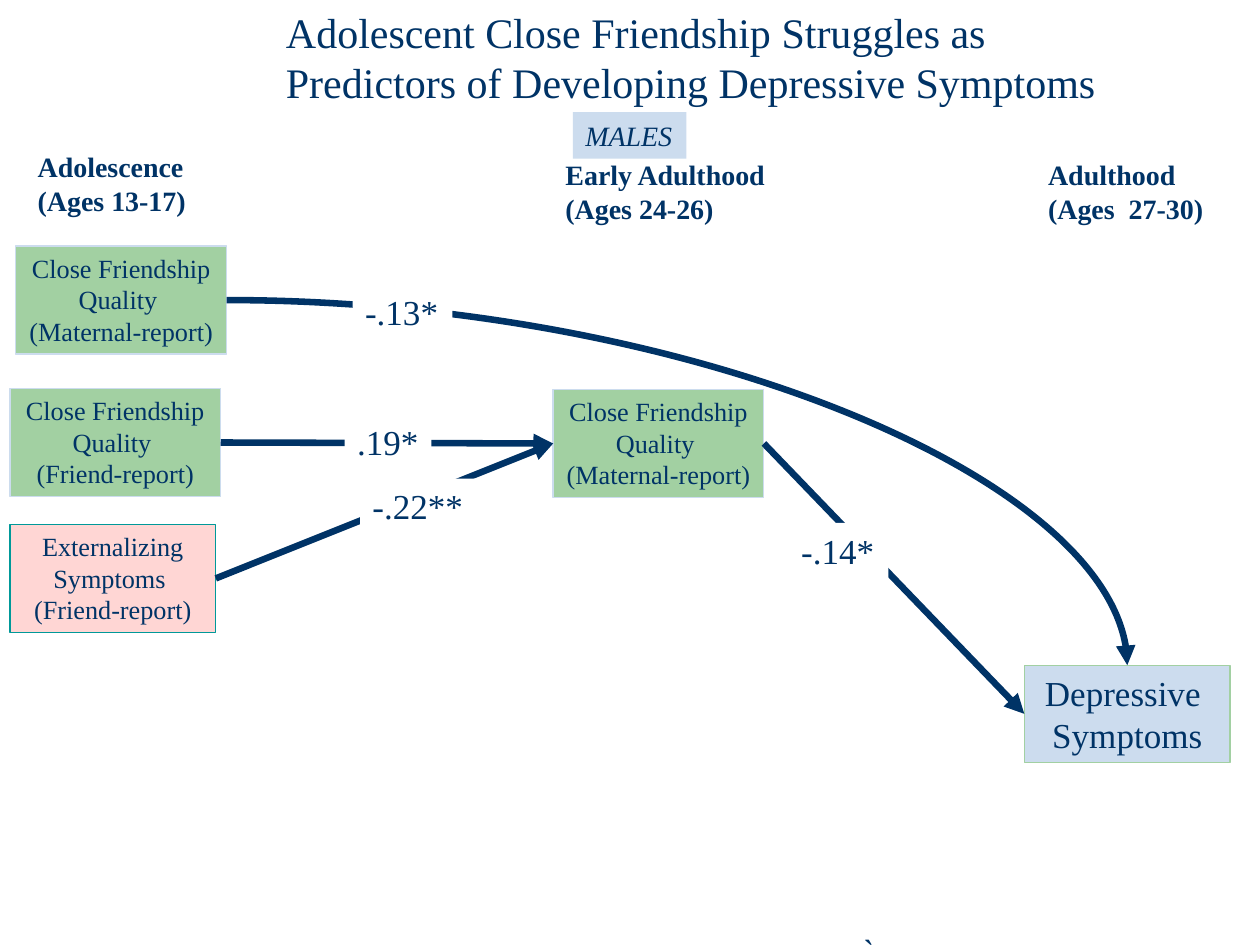
from pptx import Presentation
from pptx.dml.color import RGBColor
from pptx.enum import shapes, text
from pptx.oxml import parse_xml
from pptx.oxml.ns import nsdecls, qn
from pptx.util import Cm, Pt

NAVY = RGBColor(0x00, 0x33, 0x66)
BLUE = RGBColor(0xCC, 0xDC, 0xEE)
GREEN = RGBColor(0xA2, 0xD0, 0xA2)
PINK = RGBColor(0xFF, 0xD6, 0xD4)
TEAL = RGBColor(0x00, 0x99, 0x99)
WHITE = RGBColor(0xFF, 0xFF, 0xFF)
LEFT, MID = text.PP_ALIGN.LEFT, text.PP_ALIGN.CENTER

prs = Presentation()
prs.slide_width, prs.slide_height = Cm(25.4), Cm(19.05)
slide = prs.slides.add_slide(prs.slide_layouts[5])


def write(shape, lines, size, align=LEFT, bold=False, italic=False):
    frame = shape.text_frame
    frame.word_wrap = False
    frame.auto_size = text.MSO_AUTO_SIZE.NONE
    frame.vertical_anchor = text.MSO_ANCHOR.TOP
    for i, line in enumerate(lines):
        para = frame.add_paragraph() if i else frame.paragraphs[0]
        para.alignment = align
        run = para.add_run()
        run.text = line
        font = run.font
        font.name, font.size = "Times New Roman", Pt(size)
        font.bold, font.italic = bold, italic
        font.color.rgb = NAVY


def draw_box(x, y, w, h, fill, line=None):
    box = slide.shapes.add_shape(
        shapes.MSO_SHAPE.RECTANGLE, Cm(x), Cm(y), Cm(w), Cm(h))
    box.shadow.inherit = False
    box.fill.solid()
    box.fill.fore_color.rgb = fill
    if line is None:
        box.line.fill.background()
    else:
        box.line.color.rgb = line
        box.line.width = Pt(0.75)
    return box


# Title, group and age headings
title = slide.shapes.title
title.left, title.top, title.width, title.height = Cm(5.51), Cm(0), Cm(17), Cm(2.31)
write(title, ["Adolescent Close Friendship Struggles as",
              "Predictors of Developing Depressive Symptoms"], 24)

group = draw_box(11.55, 2.26, 2.29, 0.94, BLUE)
write(group, ["MALES"], 16, italic=True)

heads = [
    (0.51, 2.9, 3.53, "Adolescence", "(Ages 13-17)"),
    (11.15, 3.05, 4.57, "Early Adulthood", "(Ages 24-26)"),
    (20.88, 3.05, 3.68, "Adulthood", "(Ages  27-30)"),
]
for x, y, w, stage, ages in heads:
    head = slide.shapes.add_textbox(Cm(x), Cm(y), Cm(w), Cm(1.63))
    write(head, [stage, ages], 16, bold=True)

tick = slide.shapes.add_textbox(Cm(17.09), Cm(18.62), Cm(0.74), Cm(1.12))
write(tick, ["`"], 20, italic=True)

# Variables in the model
close = ["Close Friendship", "Quality "]
nodes = {}
for key, x, y, w, h, fill, line, size, lines in [
    ("mother", 0.32, 4.96, 4.25, 2.18, GREEN, BLUE, 15, close + ["(Maternal-report)"]),
    ("friend", 0.2, 7.83, 4.25, 2.18, GREEN, BLUE, 15, close + ["(Friend-report)"]),
    ("extern", 0.2, 10.57, 4.15, 2.18, PINK, TEAL, 15,
     ["Externalizing", "Symptoms ", "(Friend-report)"]),
    ("adult", 11.15, 7.85, 4.25, 2.18, GREEN, BLUE, 15, close + ["(Maternal-report)"]),
    ("mood", 20.65, 13.41, 4.15, 1.96, BLUE, GREEN, 20, ["Depressive ", "Symptoms"]),
]:
    nodes[key] = draw_box(x, y, w, h, fill, line)
    write(nodes[key], lines, size, MID)

# Paths from a right side (3) to a left side (1) or a top (0)
kinds = shapes.MSO_CONNECTOR
for start, end, side, kind in [
    ("mother", "mood", 0, kinds.CURVE),
    ("friend", "adult", 1, kinds.STRAIGHT),
    ("adult", "mood", 1, kinds.STRAIGHT),
    ("extern", "adult", 1, kinds.STRAIGHT),
]:
    link = slide.shapes.add_connector(kind, 0, 0, 0, 0)
    link.begin_connect(nodes[start], 3)
    link.end_connect(nodes[end], side)
    link.line.color.rgb = NAVY
    link.line.width = Pt(3.75)
    props = link._element.spPr
    if kind == kinds.CURVE:
        props.find(qn("a:prstGeom")).set("prst", "curvedConnector2")
    props.find(qn("a:ln")).append(
        parse_xml(f'<a:tailEnd {nsdecls("a")} type="triangle"/>'))
    props.append(parse_xml(f'<a:effectLst {nsdecls("a")}/>'))

# Coefficients lie over the paths
for x, y, w, value in [
    (7.11, 5.74, 2.01, "-.13*"),
    (6.95, 8.36, 1.75, ".19*"),
    (15.9, 10.54, 2.01, "-.14*"),
    (7.26, 9.65, 2.36, "-.22**"),
]:
    write(draw_box(x, y, w, 1.12, WHITE), [value], 20)

prs.save("out.pptx")
